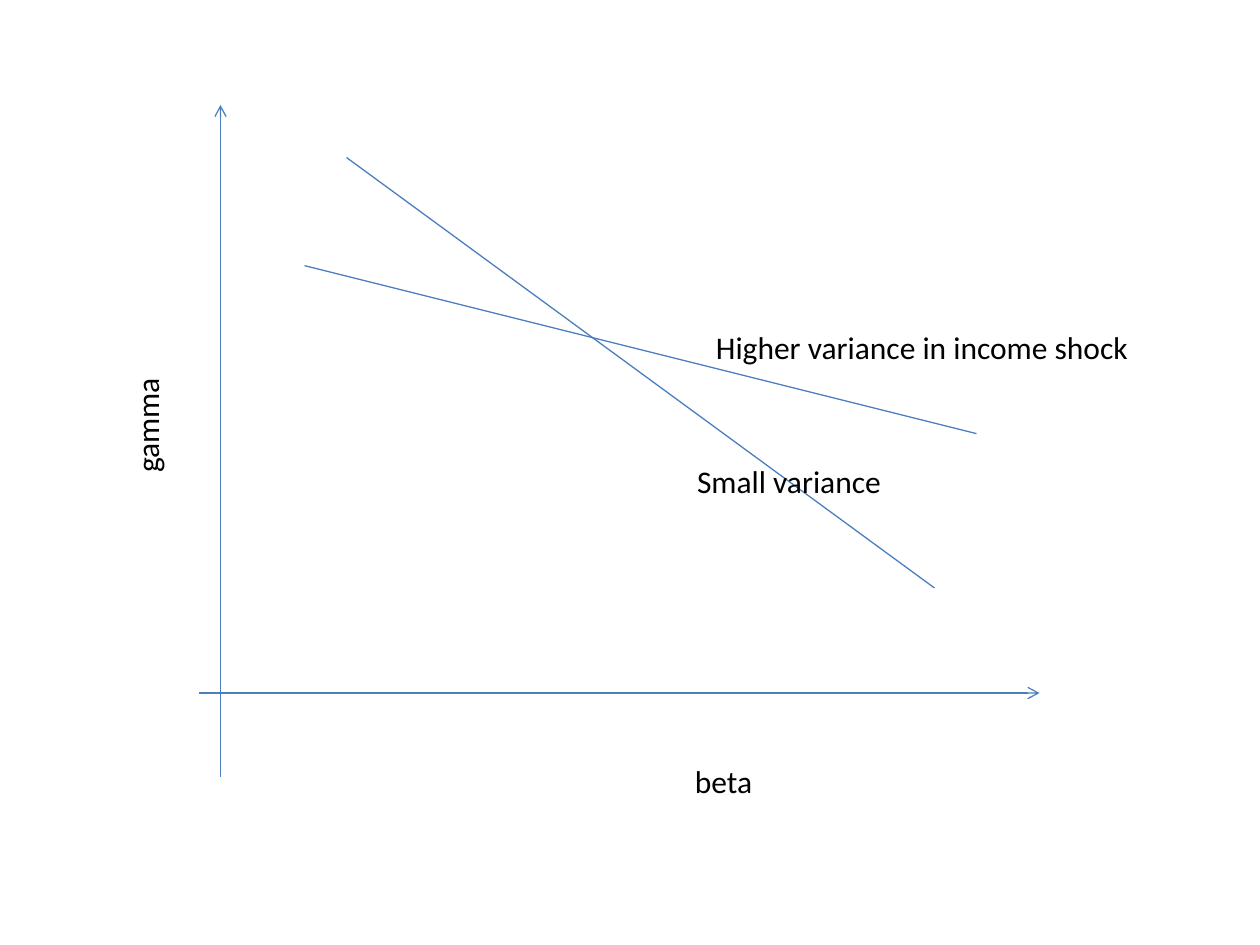
from lxml.etree import SubElement
from pptx import Presentation
from pptx.dml.color import RGBColor
from pptx.enum.shapes import MSO_CONNECTOR
from pptx.enum.text import MSO_AUTO_SIZE
from pptx.oxml.ns import qn
from pptx.util import Inches, Pt

CELLS_PER_INCH = 12
LABEL_HEIGHT = 4.85
LINE_COLOR = "4B7EBC"
TEXT_COLOR = "000000"

AXES = [
    ((21, 10), (21, 74)),
    ((99, 66), (19, 66)),
]
SMALL_VARIANCE = ((33, 15), (89, 56))
HIGHER_VARIANCE = ((29, 25.3), (93, 41.3))


def grid(cells):
    return Inches(cells / CELLS_PER_INCH)


def color(hex_value):
    return RGBColor.from_string(hex_value)


def add_line(slide, start, end, arrow=False):
    line = slide.shapes.add_connector(
        MSO_CONNECTOR.STRAIGHT, *(grid(cells) for cells in (*start, *end))
    )
    line.line.color.rgb = color(LINE_COLOR)
    line.line.width = Pt(0.75)
    properties = line._element.spPr
    if arrow:
        SubElement(properties.find(qn("a:ln")), qn("a:headEnd"), type="arrow")
    SubElement(properties, qn("a:effectLst"))


def add_label(slide, text, left, top, width, rotation=0):
    box = slide.shapes.add_textbox(
        grid(left), grid(top), grid(width), grid(LABEL_HEIGHT)
    )
    box.rotation = rotation
    frame = box.text_frame
    frame.word_wrap = True
    frame.auto_size = MSO_AUTO_SIZE.SHAPE_TO_FIT_TEXT
    span = frame.paragraphs[0].add_run()
    span.text = text
    span.font.name = "Calibri"
    span.font.size = Pt(18)
    span.font.color.rgb = color(TEXT_COLOR)


def main():
    deck = Presentation()
    deck.slide_width = Inches(10)
    deck.slide_height = Inches(7.5)
    slide = deck.slides.add_slide(deck.slide_layouts[6])

    for start, end in AXES:
        add_line(slide, start, end, arrow=True)
    add_line(slide, *SMALL_VARIANCE)
    add_label(slide, "Small variance", 65.2, 43.4, 22)
    add_line(slide, *HIGHER_VARIANCE)
    add_label(slide, "Higher variance in income shock", 67, 30.6, 50)
    add_label(slide, "beta", 65, 72, 26)
    add_label(slide, "gamma", 1, 30.8, 26, rotation=270)

    deck.save("out.pptx")


if __name__ == "__main__":
    main()
